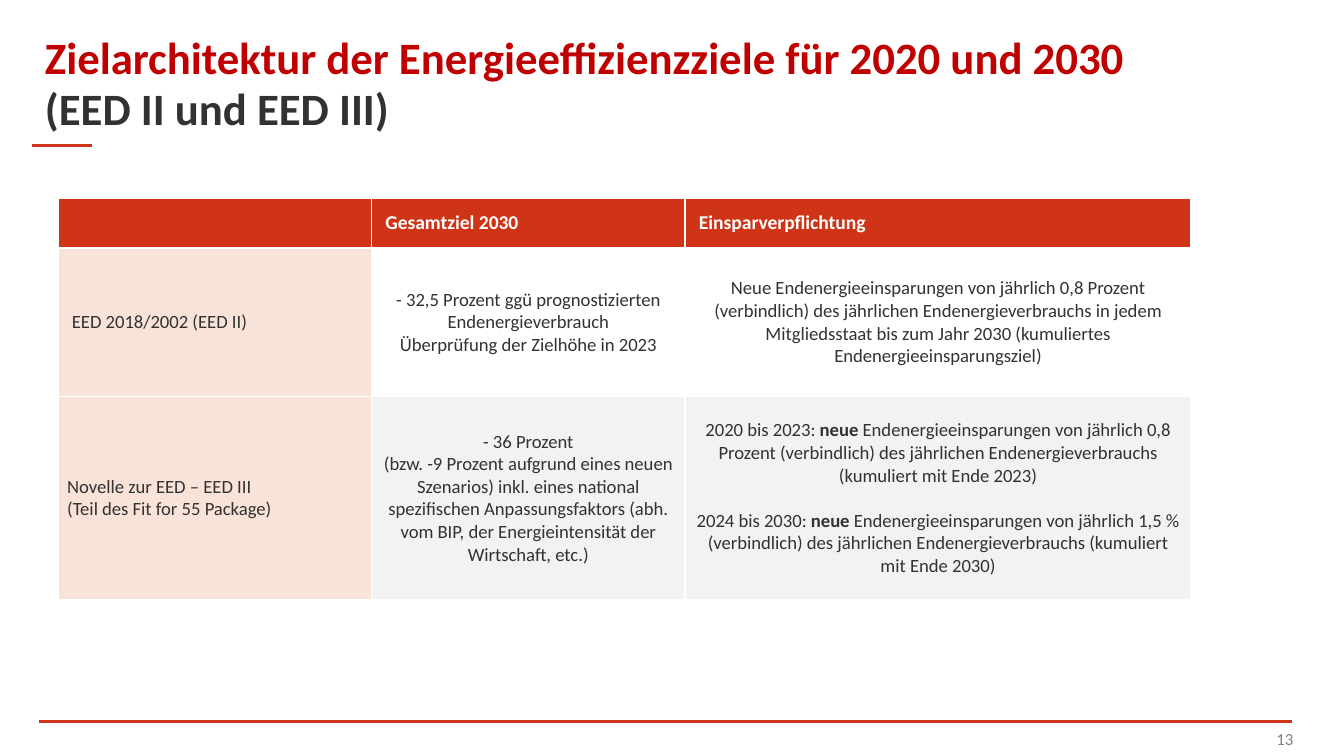
from lxml.etree import SubElement
from pptx import Presentation
from pptx.dml.color import RGBColor
from pptx.enum.shapes import MSO_CONNECTOR
from pptx.enum.text import MSO_ANCHOR, PP_ALIGN
from pptx.oxml.ns import qn
from pptx.util import Pt

FONT = "Calibri"
COLORS = {
    "title": "C00000",
    "text": "323232",
    "rule": "CE321A",
    "header": "CE3415",
    "label": "F9E3D8",
    "band": "F2F2F2",
    "white": "FFFFFF",
    "number": "808080",
}

HEADERS = ["", "Gesamtziel 2030", "Einsparverpflichtung"]
EED_2 = [
    "EED 2018/2002 (EED II)",
    "- 32,5 Prozent ggü prognostizierten Endenergieverbrauch\n"
    "Überprüfung der Zielhöhe in 2023",
    "Neue Endenergieeinsparungen von jährlich 0,8 Prozent (verbindlich) des "
    "jährlichen Endenergieverbrauchs in jedem Mitgliedsstaat bis zum Jahr 2030 "
    "(kumuliertes Endenergieeinsparungsziel)",
]
EED_3 = [
    "Novelle zur EED – EED III\n(Teil des Fit for 55 Package)",
    "- 36 Prozent\n(bzw. -9 Prozent aufgrund eines neuen Szenarios) inkl. eines "
    "national spezifischen Anpassungsfaktors (abh. vom BIP, der "
    "Energieintensität der Wirtschaft, etc.)",
    [
        ["2020 bis 2023: ", ("neue", {"bold": True}),
         " Endenergieeinsparungen von jährlich 0,8 Prozent (verbindlich) des "
         "jährlichen Endenergieverbrauchs (kumuliert mit Ende 2023)"],
        ["2024 bis 2030: ", ("neue", {"bold": True}),
         " Endenergieeinsparungen von jährlich 1,5 % (verbindlich) des "
         "jährlichen Endenergieverbrauchs (kumuliert mit Ende 2030)"],
    ],
]


def rgb(name):
    return RGBColor.from_string(COLORS[name])


def add_run(p, text, size=10, color="text", bold=False):
    """Add text to a paragraph; a newline becomes a line break."""
    for i, line in enumerate(text.split("\n")):
        if i:
            p.add_line_break()
        if line:
            r = p.add_run()
            r.text = line
            r.font.name = FONT
            r.font.size = Pt(size)
            r.font.bold = bold
            r.font.color.rgb = rgb(color)


def write(tf, content, align=PP_ALIGN.LEFT, spacing=1.0, gap=0, **style):
    """Fill a frame with a string, or with paragraphs made of runs.

    A run is a string or a (string, style changes) pair.
    """
    paragraphs = [[content]] if isinstance(content, str) else content
    for i, runs in enumerate(paragraphs):
        p = tf.add_paragraph() if i else tf.paragraphs[0]
        p.alignment = align
        p.line_spacing = spacing
        if i:
            p.space_before = Pt(gap)
        for run in runs:
            text, changes = (run, {}) if isinstance(run, str) else run
            add_run(p, text, **{**style, **changes})


class SlideBuilder:
    def __init__(self, slide):
        self.slide = slide

    def text(self, x, y, w, h, content, **style):
        sp = self.slide.shapes.add_textbox(Pt(x), Pt(y), Pt(w), Pt(h))
        tf = sp.text_frame
        tf.word_wrap = True
        tf.vertical_anchor = MSO_ANCHOR.BOTTOM
        write(tf, content, **style)

    def rule(self, x1, x2, y):
        line = self.slide.shapes.add_connector(
            MSO_CONNECTOR.STRAIGHT, Pt(x1), Pt(y), Pt(x2), Pt(y))
        line.line.color.rgb = rgb("rule")
        line.line.width = Pt(1.5)
        SubElement(line._element.spPr, qn("a:effectLst"))

    def cell(self, cell, content, fill=None, indent=5, **style):
        tc_pr = cell._tc.get_or_add_tcPr()
        for side in ("lnL", "lnR", "lnT", "lnB"):
            ln = SubElement(tc_pr, qn(f"a:{side}"), w=str(Pt(1)))
            solid = SubElement(ln, qn("a:solidFill"))
            SubElement(solid, qn("a:srgbClr"), val=COLORS["white"])
        if fill:
            cell.fill.solid()
            cell.fill.fore_color.rgb = rgb(fill)
        else:
            cell.fill.background()
        cell.vertical_anchor = MSO_ANCHOR.MIDDLE
        cell.margin_left, cell.margin_right = Pt(indent), Pt(5)
        cell.margin_top = cell.margin_bottom = 0
        write(cell.text_frame, content, gap=12, **style)

    def table(self, x, y, widths, heights):
        table = self.slide.shapes.add_table(
            len(heights), len(widths), Pt(x), Pt(y),
            Pt(sum(widths)), Pt(sum(heights))).table
        for column, width in zip(table.columns, widths):
            column.width = Pt(width)
        for row, height in zip(table.rows, heights):
            row.height = Pt(height)
        return table


def main():
    prs = Presentation()
    prs.slide_width, prs.slide_height = Pt(720), Pt(405)
    s = SlideBuilder(prs.slides.add_slide(prs.slide_layouts[6]))

    s.text(532, 388, 168, 17, "13", align=PP_ALIGN.RIGHT, size=9, color="number")
    s.rule(17, 49.5, 78)
    s.rule(21, 692, 386.5)
    s.text(17, 16.5, 599, 60, [[
        ("Zielarchitektur der Energieeffizienzziele für 2020 und 2030\n",
         {"color": "title"}),
        "(EED II und EED III)",
    ]], spacing=0.95, size=24, bold=True)

    table = s.table(31, 106, [168, 168, 271], [27, 79.5, 109])
    for col, header in enumerate(HEADERS):
        s.cell(table.cell(0, col), header, "header", indent=7.5,
               size=10.5, color="white", bold=True)
    rows = [(EED_2, None, 7.5), (EED_3, "band", 5)]
    for row, ((label, *details), fill, indent) in enumerate(rows, 1):
        s.cell(table.cell(row, 0), label, "label", indent=indent)
        for col, detail in enumerate(details, 1):
            s.cell(table.cell(row, col), detail, fill, align=PP_ALIGN.CENTER)

    prs.save("out.pptx")


if __name__ == "__main__":
    main()
